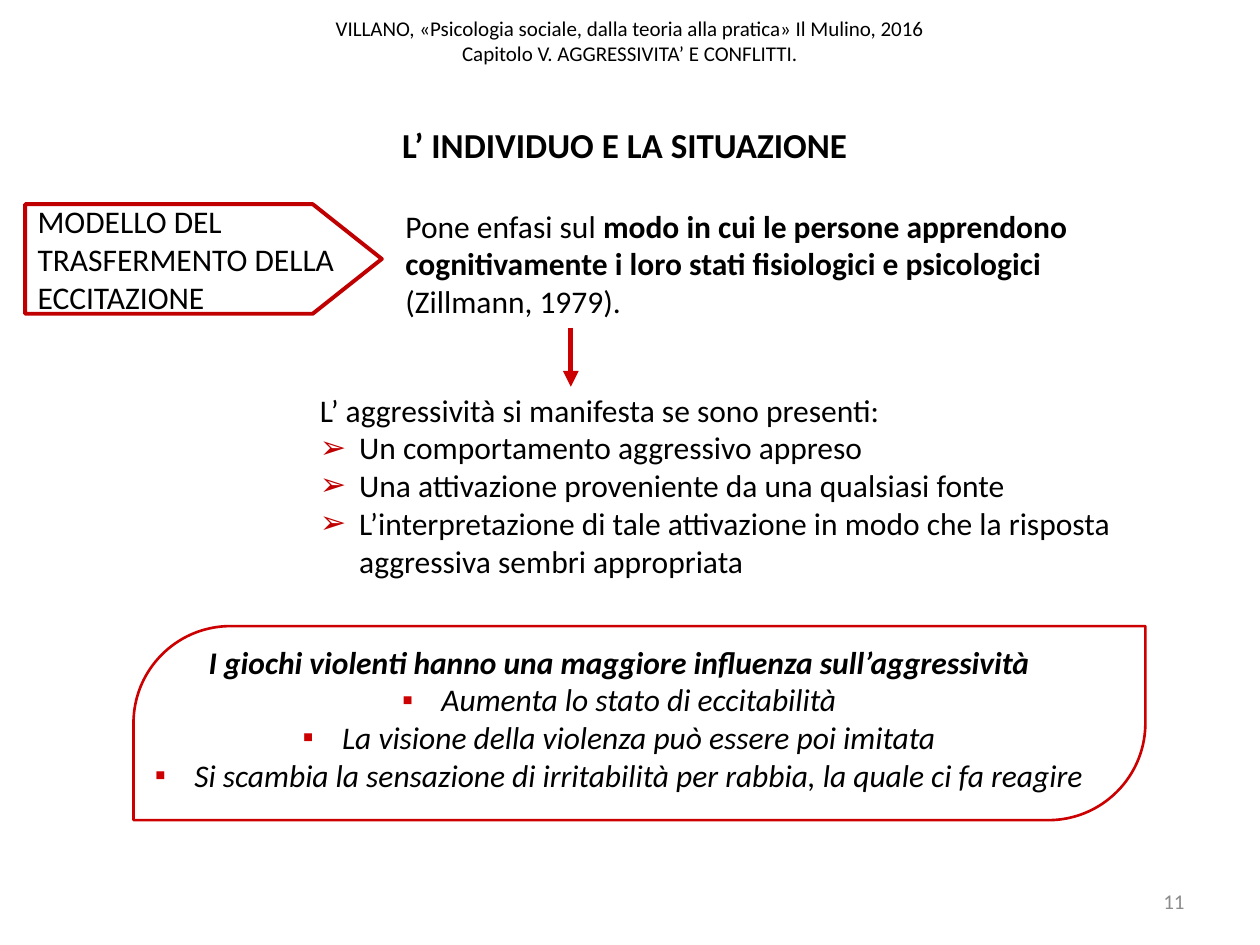
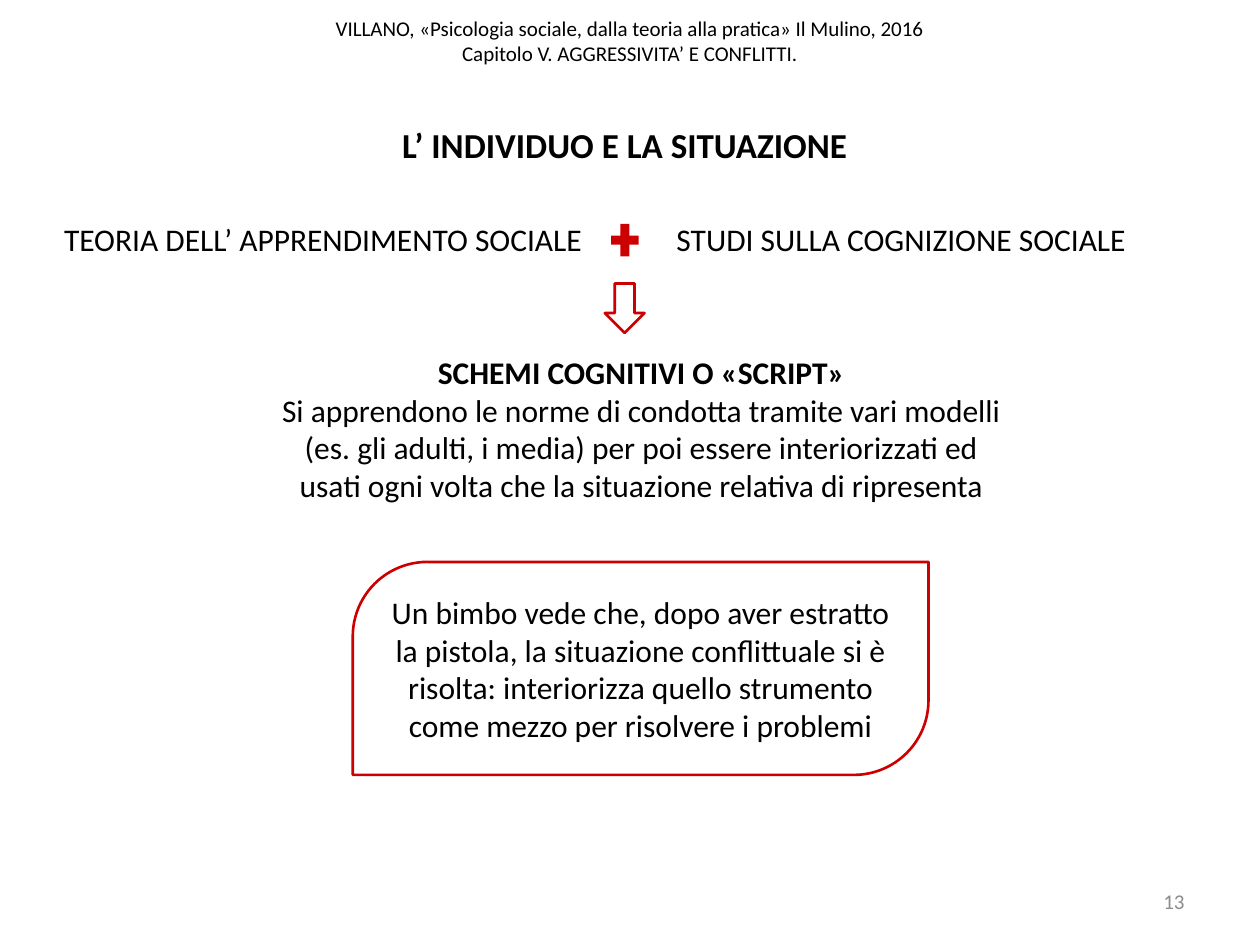
from lxml.etree import SubElement
from pptx import Presentation
from pptx.dml.color import RGBColor
from pptx.enum.shapes import MSO_CONNECTOR, MSO_SHAPE
from pptx.enum.text import MSO_ANCHOR, PP_ALIGN
from pptx.oxml.ns import qn
from pptx.util import Pt

COLORS = {"black": "000000", "grey": "8C8C8C", "red": "CC0000", "dark red": "C00000"}
FONT = "Calibri"
BODY_SIZE = 18
BULLET_INDENT = 22.5

# A paragraph is a list of (text, format) spans.
PLAIN, BOLD, ITALIC = {}, {"bold": True}, {"italic": True}
HEADER = [
    [("VILLANO, «Psicologia sociale, dalla teoria alla pratica» Il Mulino, 2016", PLAIN)],
    [("Capitolo V. AGGRESSIVITA’ E CONFLITTI.", PLAIN)],
]
TITLE = [[("L’ INDIVIDUO E LA SITUAZIONE", BOLD)]]

MODEL = [[("MODELLO DEL TRASFERMENTO DELLA ECCITAZIONE", PLAIN)]]
EMPHASIS = [[
    ("Pone enfasi sul ", PLAIN),
    ("modo in cui le persone apprendono cognitivamente i loro stati fisiologici e psicologici ", BOLD),
    ("(Zillmann, 1979).", PLAIN),
]]
CONDITIONS = [
    [("L’ aggressività si manifesta se sono presenti:", PLAIN)],
    [("Un comportamento aggressivo appreso", PLAIN)],
    [("Una attivazione proveniente da una qualsiasi fonte", PLAIN)],
    [("L’interpretazione di tale attivazione in modo che la risposta aggressiva sembri appropriata", PLAIN)],
]
VIOLENT_GAMES = [
    [("I giochi violenti hanno una maggiore influenza sull’aggressività", BOLD | ITALIC)],
    [("Aumenta lo stato di eccitabilità", ITALIC)],
    [("La visione della violenza può essere poi imitata", ITALIC)],
    [("Si scambia la sensazione di irritabilità per rabbia, la quale ci fa reagire", ITALIC)],
]

THEORIES = [
    ("TEORIA DELL’ APPRENDIMENTO SOCIALE", (29.5, 122.4, 313.2, 28.8)),
    ("STUDI SULLA COGNIZIONE SOCIALE", (379.5, 122.4, 273.6, 28.8)),
]
SCRIPTS = [
    [("SCHEMI COGNITIVI O «SCRIPT»", BOLD)],
    [("Si apprendono le norme di condotta tramite vari modelli (es. gli adulti, i media) per poi "
      "essere interiorizzati ed usati ogni volta che la situazione relativa di ripresenta", PLAIN)],
]
EXAMPLE = [[
    ("Un bimbo vede che, dopo aver estratto la pistola, la situazione conflittuale si è risolta: "
     "interiorizza quello strumento come mezzo per risolvere i problemi", PLAIN),
]]


def rgb(name):
    return RGBColor.from_string(COLORS[name])


def add_bullet(para, char, color):
    properties = para._p.get_or_add_pPr()
    properties.set("marL", str(Pt(BULLET_INDENT)))
    properties.set("indent", str(-Pt(BULLET_INDENT)))
    bullet_color = SubElement(properties, qn("a:buClr"))
    SubElement(bullet_color, qn("a:srgbClr"), val=COLORS[color])
    SubElement(properties, qn("a:buFont"), typeface="Arial")
    SubElement(properties, qn("a:buChar"), char=char)


def write(shape, paragraphs, size=BODY_SIZE, color="black", align=PP_ALIGN.LEFT,
          anchor=MSO_ANCHOR.TOP, wrap=True, bullet=None):
    """Fill a shape with text; a bullet (char, color) marks all paragraphs but the first."""
    frame = shape.text_frame
    frame.word_wrap = wrap
    frame.vertical_anchor = anchor
    for index, spans in enumerate(paragraphs):
        para = frame.add_paragraph() if index else frame.paragraphs[0]
        para.alignment = align
        if bullet and index:
            add_bullet(para, *bullet)
        for text, style in spans:
            span = para.add_run()
            span.text = text
            for key, value in ({"name": FONT, "size": Pt(size)} | style).items():
                setattr(span.font, key, value)
            span.font.color.rgb = rgb(color)


def add_text(page, place, paragraphs, **style):
    box = page.shapes.add_textbox(*map(Pt, place))
    write(box, paragraphs, **style)


def add_figure(page, kind, place, line=None, width=1.5, fill=None, adjustments=()):
    figure = page.shapes.add_shape(kind, *map(Pt, place))
    figure.shadow.inherit = False
    for index, value in enumerate(adjustments):
        figure.adjustments[index] = value
    if fill:
        figure.fill.solid()
        figure.fill.fore_color.rgb = rgb(fill)
    else:
        figure.fill.background()
    if line:
        figure.line.color.rgb = rgb(line)
        figure.line.width = Pt(width)
    else:
        figure.line.fill.background()
    return figure


def add_arrow(page, start, end):
    arrow = page.shapes.add_connector(MSO_CONNECTOR.STRAIGHT, *map(Pt, start + end))
    arrow.line.color.rgb = rgb("red")
    arrow.line.width = Pt(3)
    SubElement(arrow.line._get_or_add_ln(), qn("a:tailEnd"), type="triangle")
    SubElement(arrow._element.spPr, qn("a:effectLst"))


def add_page(deck, number):
    page = deck.slides.add_slide(deck.slide_layouts[6])
    add_text(page, (0, -8, 720, 62.6), HEADER, size=12, align=PP_ALIGN.CENTER,
             anchor=MSO_ANCHOR.MIDDLE)
    add_text(page, (516, 500.5, 168, 28.8), [[(str(number), PLAIN)]], size=12, color="grey",
             align=PP_ALIGN.RIGHT, anchor=MSO_ANCHOR.MIDDLE)
    add_text(page, (121.7, 67, 470.9, 31.7), TITLE, size=20, align=PP_ALIGN.CENTER)
    return page


def build_excitation_page(deck):
    page = add_page(deck, 11)
    model = add_figure(page, MSO_SHAPE.PENTAGON, (14.4, 116.7, 203.8, 62.6),
                       line="dark red", width=2.25, adjustments=[0.63])
    write(model, MODEL, anchor=MSO_ANCHOR.MIDDLE)
    add_text(page, (224.6, 114.5, 430.6, 72.7), EMPHASIS)
    add_arrow(page, (326.2, 187.2), (326.2, 221))
    add_text(page, (175.7, 219.6, 544.3, 138.2), CONDITIONS, bullet=("➢", "dark red"))
    add_text(page, (79.2, 363.6, 549.4, 94.3), VIOLENT_GAMES, align=PP_ALIGN.CENTER,
             wrap=False, bullet=("▪", "red"))
    add_figure(page, MSO_SHAPE.ROUND_2_DIAG_RECTANGLE, (76.3, 357.8, 578.2, 110.9),
               line="red", adjustments=[0.5, 0])


def build_script_page(deck):
    page = add_page(deck, 13)
    for theory, place in THEORIES:
        add_text(page, place, [[(theory, PLAIN)]], wrap=False)
    add_figure(page, MSO_SHAPE.MATH_PLUS, (346.3, 124.6, 21.6, 25.2), fill="red")
    add_figure(page, MSO_SHAPE.DOWN_ARROW, (345.6, 162, 22.7, 28.3), line="red")
    add_text(page, (151.2, 198, 430.6, 94.3), SCRIPTS, align=PP_ALIGN.CENTER)
    example = add_figure(page, MSO_SHAPE.ROUND_2_DIAG_RECTANGLE, (201.6, 321.1, 329, 121.7),
                         line="red", adjustments=[0.35, 0])
    write(example, EXAMPLE, align=PP_ALIGN.CENTER, anchor=MSO_ANCHOR.MIDDLE)


def main():
    deck = Presentation()
    deck.slide_width, deck.slide_height = Pt(720), Pt(540)
    build_excitation_page(deck)
    build_script_page(deck)
    deck.save("out.pptx")


if __name__ == "__main__":
    main()
